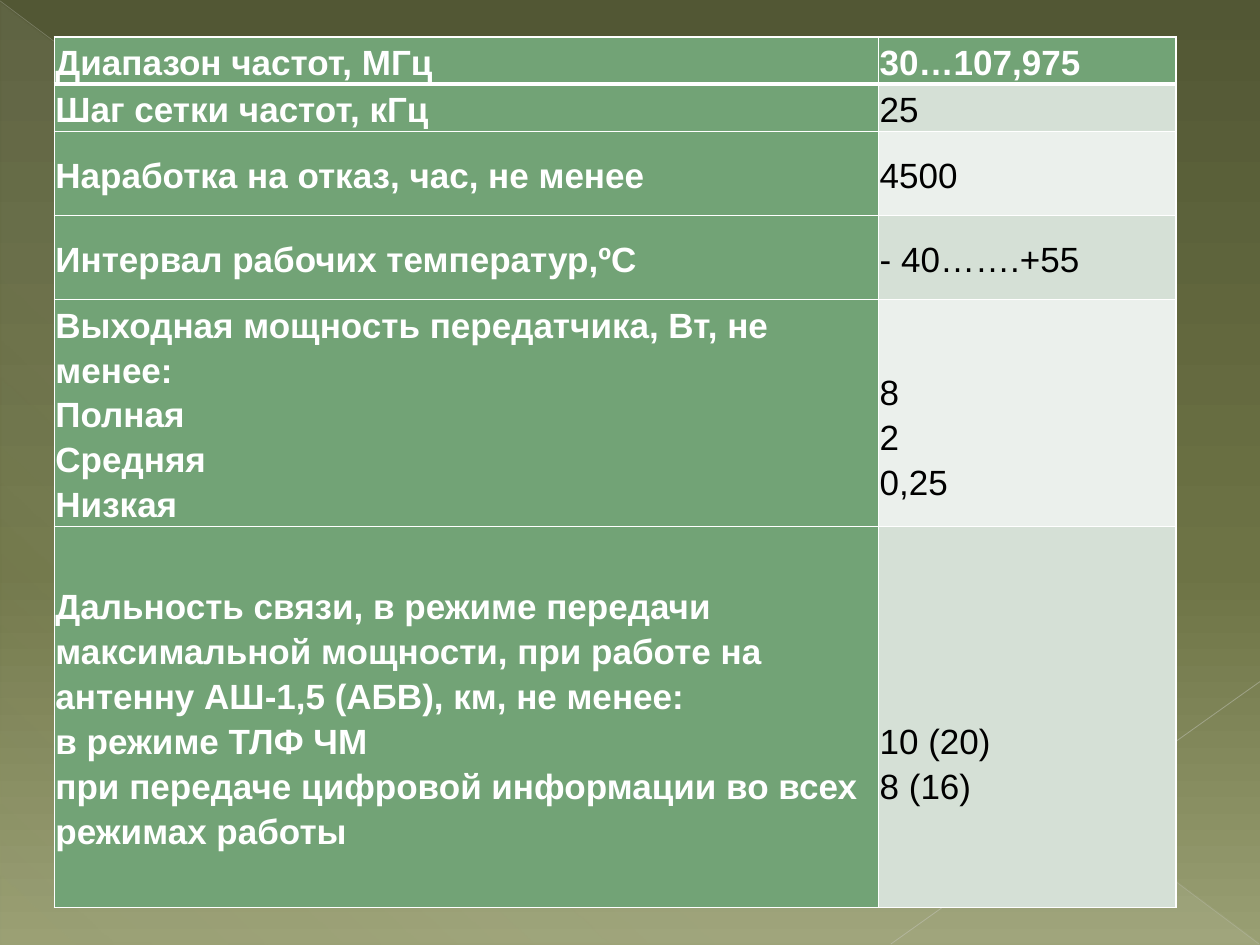
from lxml import etree
from pptx import Presentation
from pptx import util as u
from pptx.dml.color import RGBColor
from pptx.enum import shapes, text
from pptx.oxml import ns

Pt = u.Pt
COLORS = {
    "sky": "525734", "olive": "6D7345", "sand": "999F73",
    "glow": "EAEBDE", "long_ray": "C1C3B9", "short_ray": "C8C9C1",
    "header": "72A376", "band_dark": "D5E0D6", "band_light": "EBF0EC",
    "white": "FFFFFF", "black": "000000",
}
LINE_PITCH = 25.7
COLUMN_WIDTHS = [471, 170]
# Row height, parameter lines, value lines, lines of space above the values
ROWS = [
    (25, ["Диапазон частот, МГц"], ["30…107,975"], 0),
    (25, ["Шаг сетки частот, кГц"], ["25"], 0),
    (48, ["Наработка на отказ, час, не менее"], ["4500"], 0),
    (48, ["Интервал рабочих температур,ºC"], ["- 40…….+55"], 0),
    (122, ["Выходная мощность передатчика, Вт, не менее:",
           "Полная", "Средняя", "Низкая"], ["8", "2", "0,25"], 1),
    (218, ["Дальность связи, в режиме передачи максимальной мощности, "
           "при работе на антенну АШ-1,5 (АБВ), км, не менее:",
           "в режиме ТЛФ ЧМ",
           "при передаче цифровой информации во всех режимах работы"],
     ["10 (20)", "8 (16)"], 2),
]


def rgb(name):
    return RGBColor.from_string(COLORS[name])


def add_node(parent, tag, **attributes):
    node = etree.SubElement(parent, ns.qn(tag))
    for key, value in attributes.items():
        node.set(key, str(value))
    return node


def add_color(parent, name, opacity=100):
    color = add_node(parent, "a:srgbClr", val=COLORS[name])
    if opacity < 100:
        add_node(color, "a:alpha", val=opacity * 1000)


def set_gradient(owner, stops, angle):
    """Replace the solid fill in owner by stops of (position, colour, opacity)."""
    solid = owner.find(ns.qn("a:solidFill"))
    gradient = etree.Element(ns.qn("a:gradFill"), rotWithShape="1")
    stop_list = add_node(gradient, "a:gsLst")
    for position, name, opacity in stops:
        stop = add_node(stop_list, "a:gs", pos=position * 1000)
        add_color(stop, name, opacity)
    add_node(gradient, "a:lin", ang=angle * 60000, scaled=0)
    owner.replace(solid, gradient)


def paint_background(slide):
    fill = slide.background.fill
    fill.solid()
    fill.fore_color.rgb = rgb("sky")
    properties = next(slide.element.iter(ns.qn("p:bgPr")))
    set_gradient(properties, [(0, "sky", 100), (60, "olive", 100), (100, "sand", 100)], 90)


def add_glow(slide):
    glow = slide.shapes.add_shape(shapes.MSO_SHAPE.RIGHT_TRIANGLE,
                                  Pt(0.5), Pt(1.5), Pt(719.5), Pt(538.5))
    glow.shadow.inherit = False
    glow.line.fill.background()
    glow.fill.solid()
    set_gradient(glow.element.spPr, [(0, "glow", 10), (70, "glow", 8), (100, "glow", 1)], 133)


def add_ray(slide, start, end, name, width, opacity):
    ray = slide.shapes.add_connector(shapes.MSO_CONNECTOR.STRAIGHT,
                                     *map(Pt, start + end))
    ray.line.width = Pt(width)
    ray.line.color.rgb = rgb(name)
    color = next(ray.element.spPr.iter(ns.qn("a:srgbClr")))
    add_node(color, "a:alpha", val=opacity * 1000)
    add_node(ray.element.spPr, "a:effectLst")


def set_borders(cell, widths):
    properties = cell._tc.get_or_add_tcPr()
    for side, width in zip("LRTB", widths):
        border = add_node(properties, f"a:ln{side}", w=int(Pt(width)))
        add_color(add_node(border, "a:solidFill"), "white")
        add_node(border, "a:prstDash", val="solid")


def fill_cell(cell, lines, fill, is_heading, lines_above=0):
    cell.margin_left = cell.margin_right = cell.margin_bottom = Pt(0.7)
    cell.margin_top = Pt(0.7 + lines_above * LINE_PITCH)
    cell.vertical_anchor = text.MSO_ANCHOR.MIDDLE
    cell.fill.solid()
    cell.fill.fore_color.rgb = rgb(fill)
    cell.text_frame.text = "\n".join(lines)
    for paragraph in cell.text_frame.paragraphs:
        paragraph.line_spacing = 1.15
        font = paragraph.runs[0].font
        font.name, font.size, font.bold = "Arial", Pt(20), is_heading
        font.color.rgb = rgb("white" if is_heading else "black")


def add_parameters(slide):
    heights = [row[0] for row in ROWS]
    table = slide.shapes.add_table(len(ROWS), 2, Pt(31), Pt(21),
                                   Pt(sum(COLUMN_WIDTHS)), Pt(sum(heights))).table
    for column, width in zip(table.columns, COLUMN_WIDTHS):
        column.width = Pt(width)
    for index, (height, parameter, value, lines_above) in enumerate(ROWS):
        table.rows[index].height = Pt(height)
        is_top = index == 0
        top, bottom = 3 if index == 1 else 1, 3 if is_top else 1
        for column in range(2):
            set_borders(table.cell(index, column), (1, 1, top, bottom))
        band = "band_dark" if index % 2 else "band_light"
        fill_cell(table.cell(index, 0), parameter, "header", True)
        fill_cell(table.cell(index, 1), value, "header" if is_top else band,
                  is_top, lines_above)


def main():
    deck = Presentation()
    deck.slide_width, deck.slide_height = Pt(720), Pt(540)
    slide = deck.slides.add_slide(deck.slide_layouts[6])
    # Backdrop
    paint_background(slide)
    add_glow(slide)
    add_ray(slide, (0, 0.5), (719.5, 539.5), "long_ray", 0.39, 35)
    add_ray(slide, (720, 389.5), (509, 539.5), "short_ray", 0.47, 45)
    # Radio parameters
    add_parameters(slide)
    deck.save("out.pptx")


if __name__ == "__main__":
    main()
